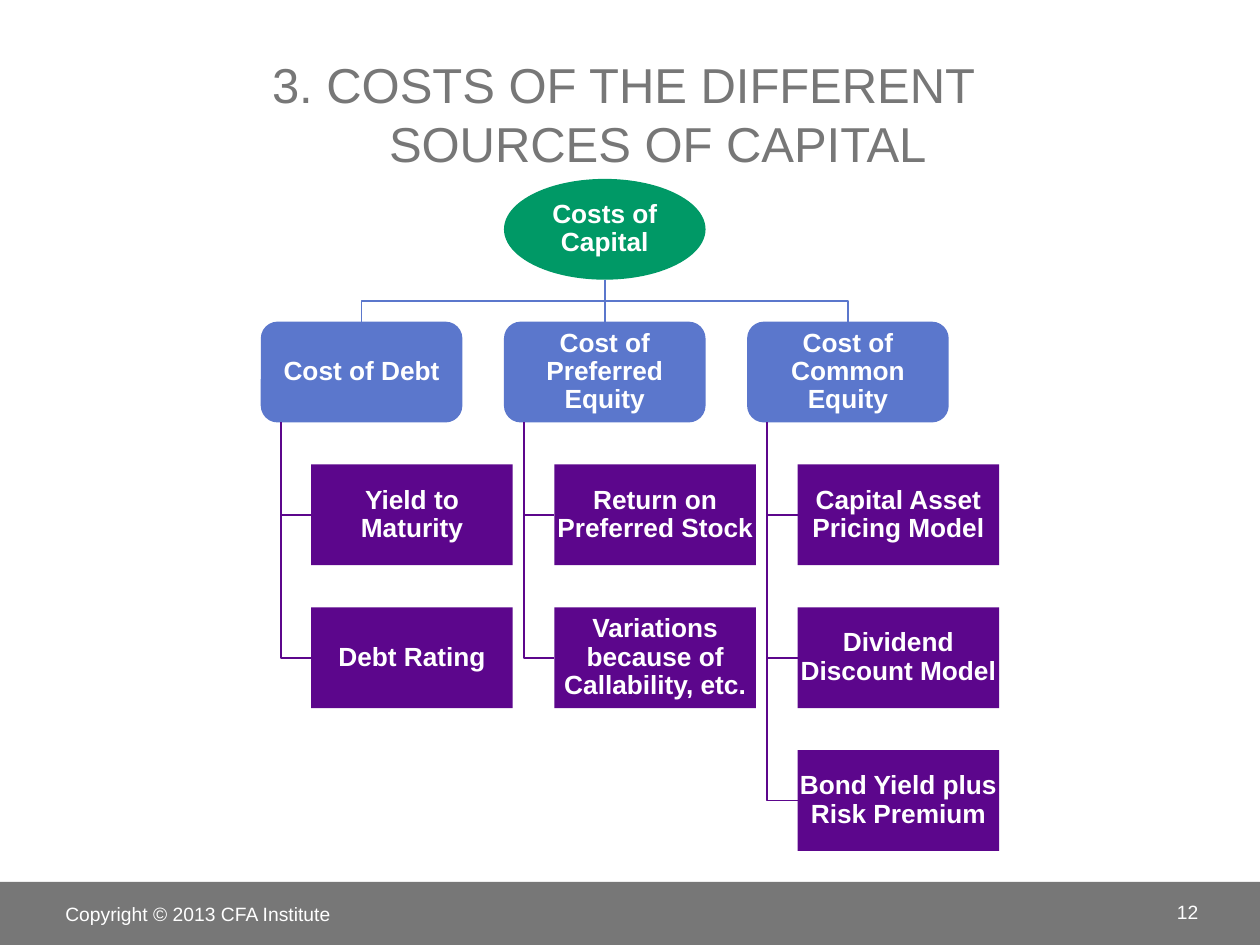
import pptx
import pptx.util
import pptx.dml.color
import pptx.enum.shapes
import pptx.enum.text
import lxml.etree

Inches = pptx.util.Inches
Pt = pptx.util.Pt
RGBColor = pptx.dml.color.RGBColor
MSO_SHAPE = pptx.enum.shapes.MSO_SHAPE
PP_ALIGN = pptx.enum.text.PP_ALIGN
MSO_ANCHOR = pptx.enum.text.MSO_ANCHOR

GREY = RGBColor(0x77, 0x77, 0x77)
GREEN = RGBColor(0x00, 0x99, 0x66)
BLUE = RGBColor(0x5B, 0x77, 0xCC)
PURPLE = RGBColor(0x5C, 0x06, 0x8C)
WHITE = RGBColor(0xFF, 0xFF, 0xFF)

LEFT, TOP = 2.07, 1.42
BOX_W, BOX_H = 1.6, 0.8
COL_STEP, ROW_STEP = 1.93, BOX_H * 17 / 12
CHILD_INDENT = BOX_W / 4
STEM_INDENT = BOX_W / 10

BRANCHES = [
    ("Cost of Debt", ["Yield to Maturity", "Debt Rating"]),
    ("Cost of Preferred Equity",
     ["Return on Preferred Stock", "Variations because of Callability, etc."]),
    ("Cost of Common Equity",
     ["Capital Asset Pricing Model", "Dividend Discount Model",
      "Bond Yield plus Risk Premium"]),
]


def col_x(col):
    return LEFT + col * COL_STEP


def row_y(row):
    return TOP + row * ROW_STEP


class Deck:
    font = "Arial"

    def __init__(self, prs):
        self.prs = prs
        self.s = prs.slides.add_slide(prs.slide_layouts[5])

    def run(self, p, text, size, color, bold=False):
        r = p.add_run()
        r.text = text
        r.font.name = self.font
        r.font.size = Pt(size)
        r.font.bold = bold
        r.font.color.rgb = color

    def title(self, lines, x, y, w, h):
        sp = self.s.shapes.title
        sp.left, sp.top, sp.width, sp.height = map(Inches, (x, y, w, h))
        tf = sp.text_frame
        tf.auto_size = pptx.enum.text.MSO_AUTO_SIZE.NONE
        tf.vertical_anchor = MSO_ANCHOR.BOTTOM
        p = tf.paragraphs[0]
        p.alignment = PP_ALIGN.CENTER
        pPr = p._p.get_or_add_pPr()
        pPr.set("marL", str(Inches(0.44)))
        pPr.set("indent", str(Inches(-0.44)))
        for i, line in enumerate(lines):
            if i:
                p.add_line_break()
            self.run(p, line, 28, GREY)

    def shape(self, kind, fill, x, y, w, h):
        sp = self.s.shapes.add_shape(kind, *map(Inches, (x, y, w, h)))
        sp.shadow.inherit = False
        sp.fill.solid()
        sp.fill.fore_color.rgb = fill
        sp.line.fill.background()
        return sp

    def box(self, kind, fill, text, col, row, indent=0):
        sp = self.shape(kind, fill, col_x(col) + indent, row_y(row), BOX_W, BOX_H)
        tf = sp.text_frame
        tf.word_wrap = True
        tf.vertical_anchor = MSO_ANCHOR.MIDDLE
        tf.margin_left = tf.margin_right = Inches(0.01)
        tf.margin_top = tf.margin_bottom = Inches(0.01)
        p = tf.paragraphs[0]
        p.alignment = PP_ALIGN.CENTER
        p.line_spacing = 0.9
        self.run(p, text, 15, WHITE, bold=True)
        return sp

    def elbow(self, color, *points):
        pts = [(Inches(x), Inches(y)) for x, y in points]
        fb = self.s.shapes.build_freeform(*pts[0])
        fb.add_line_segments(pts[1:], close=False)
        sp = fb.convert_to_shape()
        sp.shadow.inherit = False
        sp.fill.background()
        sp.line.color.rgb = color
        sp.line.width = Pt(1)

    def link(self, color, begin, begin_site, end, end_site):
        cn = self.s.shapes.add_connector(
            pptx.enum.shapes.MSO_CONNECTOR.STRAIGHT,
            begin.left + begin.width // 2, begin.top + begin.height,
            end.left + end.width // 2, end.top)
        cn.begin_connect(begin, 0)
        cn.end_connect(end, end_site)
        cn._element.nvCxnSpPr.cNvCxnSpPr.stCxn.set("idx", str(begin_site))
        cn.begin_x = begin.left + begin.width // 2
        cn.begin_y = begin.top + begin.height
        cn.line.color.rgb = color
        cn.line.width = Pt(1)
        lxml.etree.SubElement(cn._element.spPr, pptx.oxml.ns.qn("a:effectLst"))

    def label(self, text, align, x, y, w, h):
        sp = self.s.shapes.add_textbox(*map(Inches, (x, y, w, h)))
        tf = sp.text_frame
        tf.word_wrap = True
        tf.vertical_anchor = MSO_ANCHOR.MIDDLE
        p = tf.paragraphs[0]
        p.alignment = align
        self.run(p, text, 11, WHITE)


def main():
    prs = pptx.Presentation()
    prs.slide_width, prs.slide_height = Inches(10), Inches(7.5)
    deck = Deck(prs)
    deck.shape(MSO_SHAPE.RECTANGLE, GREY, 0, 7, 10, 0.5)
    deck.title(["3. COSTS OF THE DIFFERENT ", "SOURCES OF CAPITAL"],
               0.42, 0.17, 9.16, 1.25)

    root_col = 1
    root_x = col_x(root_col) + BOX_W / 2
    root_bottom = TOP + BOX_H
    bus_y = (root_bottom + row_y(1)) / 2
    root = deck.box(MSO_SHAPE.OVAL, GREEN, "Costs of Capital", root_col, 0)

    for col, (branch, children) in enumerate(BRANCHES):
        head = deck.box(MSO_SHAPE.ROUNDED_RECTANGLE, BLUE, branch, col, 1)
        if col == root_col:
            deck.link(BLUE, root, 4, head, 0)
        else:
            head_x = col_x(col) + BOX_W / 2
            deck.elbow(BLUE, (root_x, root_bottom), (root_x, bus_y),
                       (head_x, bus_y), (head_x, row_y(1)))
        stem_x = col_x(col) + STEM_INDENT
        for row, child in enumerate(children, 2):
            mid_y = row_y(row) + BOX_H / 2
            deck.elbow(PURPLE, (stem_x, row_y(1) + BOX_H), (stem_x, mid_y),
                       (col_x(col) + CHILD_INDENT, mid_y))
            deck.box(MSO_SHAPE.RECTANGLE, PURPLE, child, col, row, CHILD_INDENT)

    deck.label("Copyright © 2013 CFA Institute", PP_ALIGN.LEFT, 0.42, 7.03, 3.17, 0.44)
    deck.label("12", PP_ALIGN.RIGHT, 8.75, 7.04, 0.86, 0.4)
    prs.save("out.pptx")


if __name__ == "__main__":
    main()
